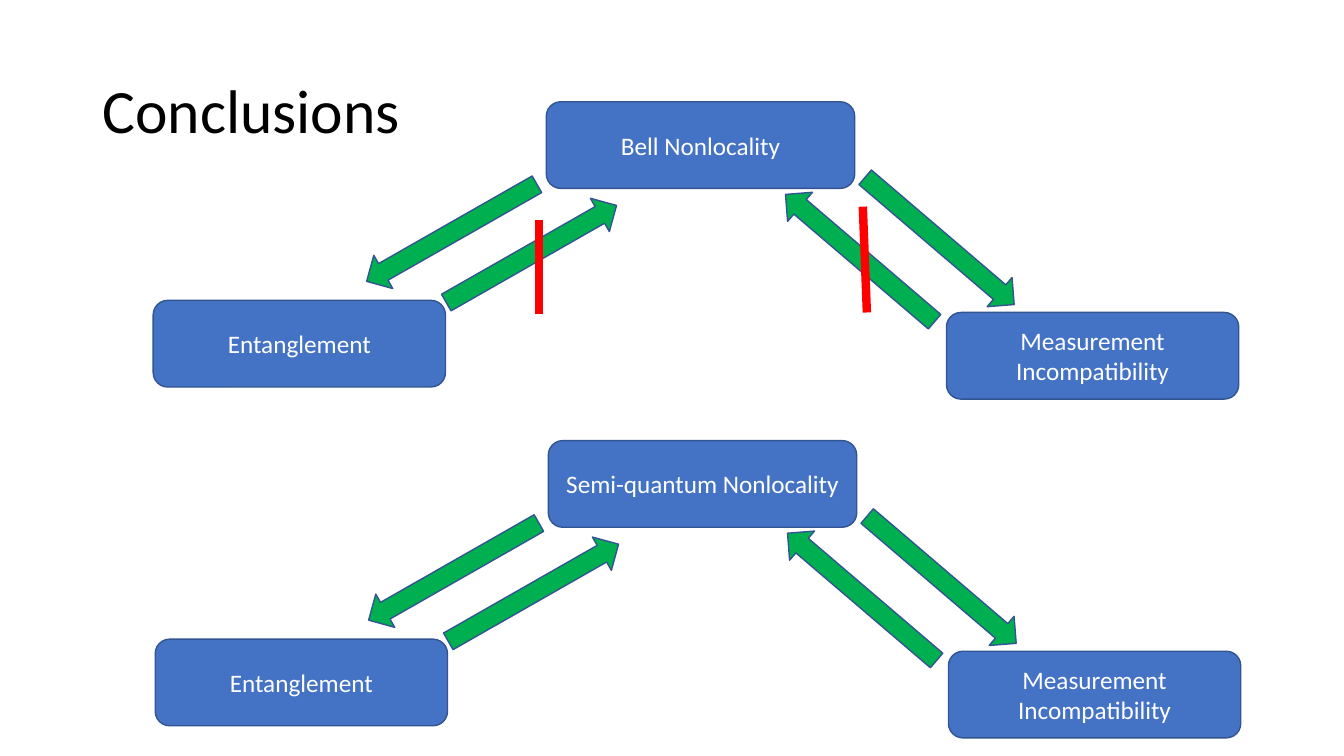
from pptx import Presentation
from pptx import util as u
from pptx.dml.color import RGBColor
from pptx.enum import shapes, text
from pptx.oxml.ns import qn
from lxml import etree

Pt = u.Pt
SHAPE = shapes.MSO_SHAPE
COLORS = {
    "black": "000000",
    "white": "FFFFFF",
    "box": "4472C4",
    "outline": "325491",
    "arrow": "00B050",
    "strike": "FF0000",
}
BOX_HEIGHT = 61.92
ARROW_HEIGHT = 27.36
LEFT_SLOPE, RIGHT_SLOPE = -29.7, 40.5


def color(name):
    return RGBColor.from_string(COLORS[name])


def write_text(sp, content, size=18, fill="white", align=text.PP_ALIGN.CENTER,
               spacing=None):
    tf = sp.text_frame
    tf.word_wrap = True
    tf.vertical_anchor = text.MSO_ANCHOR.MIDDLE
    p = tf.paragraphs[0]
    p.alignment = align
    p.line_spacing = spacing
    r = p.add_run()
    r.text = content
    r.font.name = "Calibri"
    r.font.size = Pt(size)
    r.font.color.rgb = color(fill)


def add_title(s, content):
    sp = s.shapes.add_textbox(Pt(66.24), Pt(28.8), Pt(828), Pt(104.4))
    write_text(sp, content, size=44, fill="black",
               align=text.PP_ALIGN.LEFT, spacing=0.9)


def add_block(s, kind, x, y, w, h, fill):
    sp = s.shapes.add_shape(kind, Pt(x), Pt(y), Pt(w), Pt(h))
    sp.shadow.inherit = False
    sp.fill.solid()
    sp.fill.fore_color.rgb = color(fill)
    sp.line.color.rgb = color("outline")
    sp.line.width = Pt(1)
    return sp


def add_box(s, content, x, y, w):
    sp = add_block(s, SHAPE.ROUNDED_RECTANGLE, x, y, w, BOX_HEIGHT, "box")
    write_text(sp, content)


def add_arrow(s, kind, x, y, slope):
    sp = add_block(s, kind, x, y, 140, ARROW_HEIGHT, "arrow")
    sp.rotation = slope


def add_strike(s, x1, y1, x2, y2):
    line = s.shapes.add_connector(shapes.MSO_CONNECTOR.STRAIGHT,
                                  Pt(x1), Pt(y1), Pt(x2), Pt(y2))
    line.line.color.rgb = color("strike")
    line.line.width = Pt(6)
    etree.SubElement(line._element.spPr, qn("a:effectLst"))


def add_diagram(s, nonlocality, dx=0, dy=0):
    # Concepts
    add_box(s, "Entanglement", 109.44 + dx, 214.56 + dy, 208.8)
    add_box(s, nonlocality, 390.24 + dx, 72.72 + dy, 220.32)
    add_box(s, "Measurement Incompatibility", 676.08 + dx, 223.2 + dy, 208.8)

    # Implications in both directions
    for kind, x, y, slope in (
        (SHAPE.LEFT_ARROW, 252.72, 152.64, LEFT_SLOPE),
        (SHAPE.RIGHT_ARROW, 309.6, 167.76, LEFT_SLOPE),
        (SHAPE.LEFT_ARROW, 544.32, 170.64, RIGHT_SLOPE),
        (SHAPE.RIGHT_ARROW, 601.2, 158.4, RIGHT_SLOPE),
    ):
        add_arrow(s, kind, x + dx, y + dy, slope)


def main():
    prs = Presentation()
    prs.slide_width, prs.slide_height = Pt(960), Pt(540)
    s = prs.slides.add_slide(prs.slide_layouts[6])

    add_title(s, "Conclusions")

    # Upper diagram, with the failing implications struck out
    add_diagram(s, "Bell Nonlocality")
    add_strike(s, 385.2, 224.64, 385.2, 156.96)
    add_strike(s, 616.32, 147.6, 619.2, 223.2)

    # Lower diagram
    add_diagram(s, "Semi-quantum Nonlocality", dx=1.44, dy=242)

    prs.save("out.pptx")


if __name__ == "__main__":
    main()
